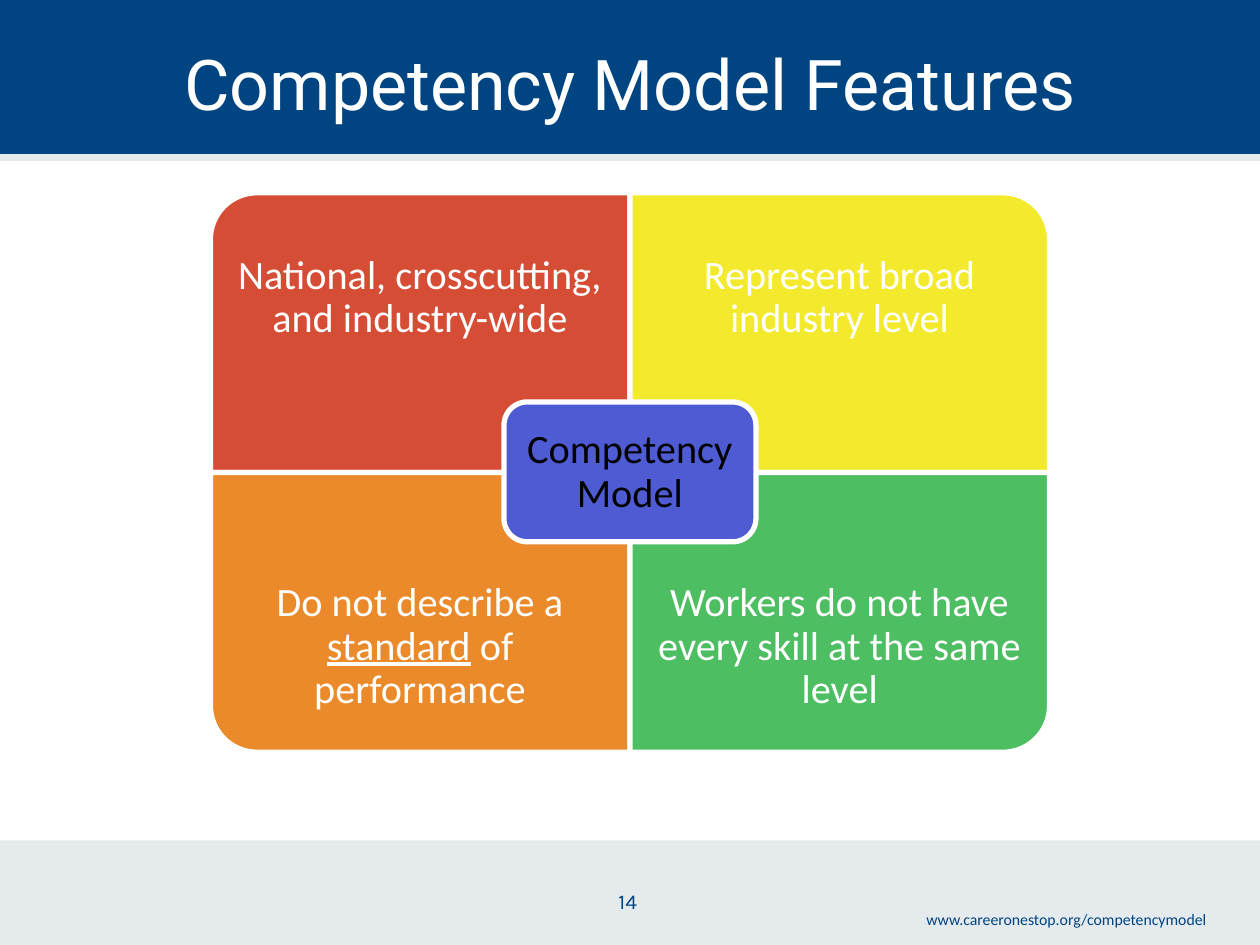
from pptx import Presentation
from pptx.dml.color import RGBColor
from pptx.enum.shapes import MSO_CONNECTOR, MSO_SHAPE
from pptx.enum.text import MSO_ANCHOR, PP_ALIGN
from pptx.oxml.ns import qn
from pptx.util import Pt
from lxml.etree import SubElement

PX = 9144  # EMU in one px, 100 px to the inch
NAVY, MIST, WHITE, BLACK = "004481", "E5EAED", "FFFFFF", "000000"


def px(*lengths):
    return [length * PX for length in lengths]


def rgb(value):
    return RGBColor.from_string(value)


class Deck:
    body_font = "Calibri"
    body_size = 23
    border = 3

    def __init__(self, width, height):
        self.prs = Presentation()
        self.prs.slide_width, self.prs.slide_height = px(width, height)
        self.slide = self.prs.slides.add_slide(self.prs.slide_layouts[6])

    def box(self, at, fill, kind=MSO_SHAPE.RECTANGLE, bordered=False, turn=0):
        """Add a filled shape; at is its place as seen after the turn."""
        left, top, width, height = px(*at)
        if turn % 180:
            left += (width - height) // 2
            top += (height - width) // 2
            width, height = height, width
        shape = self.slide.shapes.add_shape(kind, left, top, width, height)
        shape.rotation = turn
        shape.shadow.inherit = False
        shape.fill.solid()
        shape.fill.fore_color.rgb = rgb(fill)
        if bordered:
            shape.line.color.rgb = rgb(WHITE)
            shape.line.width = Pt(self.border)
        else:
            shape.line.fill.background()

    def rule(self, start, end, color, weight):
        line = self.slide.shapes.add_connector(
            MSO_CONNECTOR.STRAIGHT, *px(*start, *end))
        line.line.color.rgb = rgb(color)
        line.line.width = Pt(weight)
        SubElement(line._element.spPr, qn("a:effectLst"))

    def text(self, at, words, size, font, color, align=PP_ALIGN.CENTER,
             anchor=MSO_ANCHOR.TOP, wrap=True, inset=None, spacing=None):
        """Add text; words is a list in which every second run is underlined."""
        frame = self.slide.shapes.add_textbox(*px(*at)).text_frame
        frame.word_wrap = wrap
        frame.vertical_anchor = anchor
        if inset is not None:
            frame.margin_left, frame.margin_top = px(inset, inset)
            frame.margin_right, frame.margin_bottom = px(inset, inset)
        paragraph = frame.paragraphs[0]
        paragraph.alignment = align
        if spacing:
            paragraph.line_spacing = spacing
        paragraph.font.size = Pt(size)
        paragraph.font.name = font
        paragraph.font.color.rgb = rgb(color)
        for index, part in enumerate(words):
            run = paragraph.add_run()
            run.text = part
            if index % 2:
                run.font.underline = True

    def label(self, at, words, color, inset):
        self.text(at, words, self.body_size, self.body_font, color,
                  anchor=MSO_ANCHOR.MIDDLE, inset=inset, spacing=0.9)


def main():
    deck = Deck(1000, 750)

    deck.box((0, 667, 1000, 83), MIST)
    deck.box((0, 0, 1000, 125), NAVY)
    deck.rule((0, 125), (1000, 125), MIST, 4.5)
    deck.text((481, 700, 37, 30), ["14"], 12, "Karla", NAVY,
              align=PP_ALIGN.LEFT, wrap=False)
    deck.text((700, 717, 267, 25), ["www.careeronestop.org/competencymodel"],
              9, "Calibri", NAVY, align=PP_ALIGN.RIGHT)
    deck.text((50, 17, 900, 97), ["Competency Model Features"], 40, "Roboto",
              WHITE, anchor=MSO_ANCHOR.MIDDLE)

    center_x, center_y = 500, 375
    width, height, label_height = 333, 222, 167
    # column, row, turn that puts the round corner outside, fill, words
    features = [
        (0, 0, 270, "D64D36", ["National, crosscutting, and industry-wide"]),
        (1, 0, 0, "F3EA2D", ["Represent broad industry level"]),
        (0, 1, 180, "EA8A2A",
         ["Do not describe a ", "standard", " of performance"]),
        (1, 1, 90, "4EBE63",
         ["Workers do not have every skill at the same level"]),
    ]
    for column, row, turn, fill, words in features:
        left = center_x + (column - 1) * width
        top = center_y + (row - 1) * height
        deck.box((left, top, width, height), fill,
                 MSO_SHAPE.ROUND_1_RECTANGLE, bordered=True, turn=turn)
        label_top = top + row * (height - label_height)
        deck.label((left, label_top, width, label_height), words, WHITE, 18)

    deck.box((center_x - 100, center_y - 56, 200, 111), "4E5BD2",
             MSO_SHAPE.ROUNDED_RECTANGLE, bordered=True)
    deck.label((center_x - 95, center_y - 50, 190, 100),
               ["Competency Model"], BLACK, 10)

    deck.prs.save("out.pptx")


if __name__ == "__main__":
    main()
